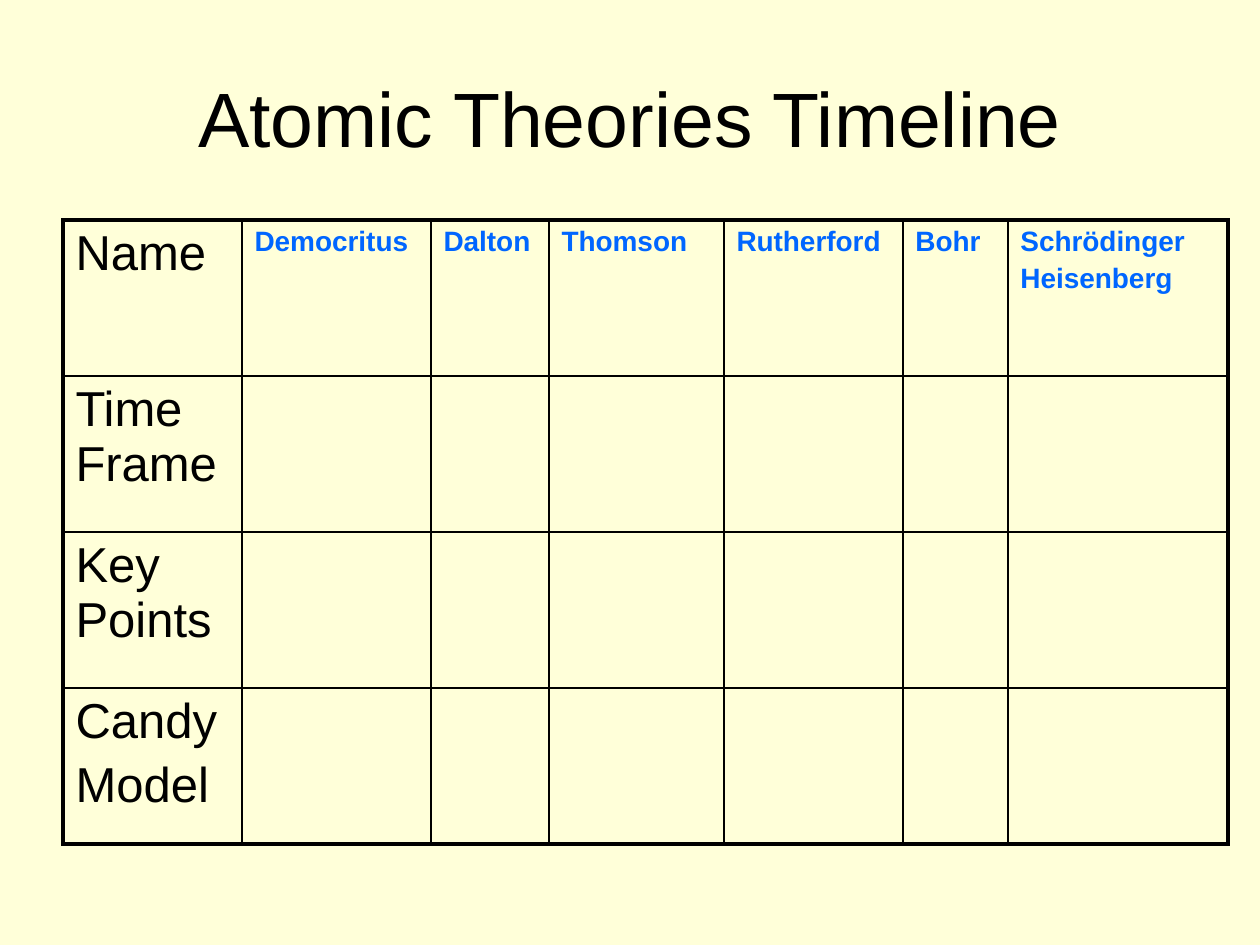
from pptx import Presentation, util as u
from pptx.dml.color import RGBColor
from pptx.enum import text
from pptx.oxml import parse_xml
from pptx.oxml.ns import nsdecls

PX = u.Inches(1) / 126
COLORS = {"paper": "FFFFD9", "ink": "000000", "name": "0066FF"}
FONT = "Arial"
THIN, THICK = 1, 2.25

COLUMN_WIDTHS = [179, 189, 118, 175, 179, 105, 220]
SCIENTISTS = ["Democritus", "Dalton", "Thomson", "Rutherford", "Bohr",
              "Schrödinger\nHeisenberg"]
ROW_LABELS = ["Name", "Time Frame", "Key Points", "Candy\nModel"]


def px(n):
    return u.Emu(round(n * PX))


def write(tf, words, size, color="ink", bold=False, align=text.PP_ALIGN.LEFT,
          before=0):
    """Write one paragraph per line; before is a share of the text size."""
    tf.word_wrap = True
    for i, line in enumerate(words.split("\n")):
        p = tf.paragraphs[0] if i == 0 else tf.add_paragraph()
        p.alignment = align
        p.space_before = u.Pt(round(size * before, 1))
        r = p.add_run()
        r.text = line
        r.font.name, r.font.size, r.font.bold = FONT, u.Pt(size), bold
        r.font.color.rgb = RGBColor.from_string(COLORS[color])


def set_borders(cell, **widths):
    """Line the sides L, R, T and B of a cell, given in that order."""
    tcPr = cell._tc.get_or_add_tcPr()
    for side, width in widths.items():
        tcPr.append(parse_xml(
            f'<a:ln{side} {nsdecls("a")} w="{u.Pt(width)}"><a:solidFill>'
            f'<a:srgbClr val="{COLORS["ink"]}"/></a:solidFill></a:ln{side}>'))


def add_title(s, x, y, w, h):
    tf = s.shapes.add_textbox(px(x), px(y), px(w), px(h)).text_frame
    tf.vertical_anchor = text.MSO_ANCHOR.MIDDLE
    write(tf, "Atomic Theories Timeline", 44, align=text.PP_ALIGN.CENTER)


def add_timeline(s, x, y, w, h):
    n_rows, n_cols = len(ROW_LABELS), len(COLUMN_WIDTHS)
    table = s.shapes.add_table(n_rows, n_cols, px(x), px(y), px(w), px(h)).table
    table.first_row = table.horz_banding = False
    for column, width in zip(table.columns, COLUMN_WIDTHS):
        column.width = px(width * w / sum(COLUMN_WIDTHS))
    for row in table.rows:
        row.height = px(h / n_rows)

    for i in range(n_rows):
        for j in range(n_cols):
            cell = table.cell(i, j)
            set_borders(cell,
                        L=THICK if j == 0 else THIN,
                        R=THICK if j == n_cols - 1 else THIN,
                        T=THICK if i == 0 else THIN,
                        B=THICK if i == n_rows - 1 else THIN)
            cell.fill.background()

    for i, label in enumerate(ROW_LABELS):
        write(table.cell(i, 0).text_frame, label, 28, before=0.2)
    for j, name in enumerate(SCIENTISTS, 1):
        write(table.cell(0, j).text_frame, name, 16, color="name", bold=True,
              before=0.2)


def main():
    prs = Presentation()
    prs.slide_width, prs.slide_height = px(1260), px(945)
    s = prs.slides.add_slide(prs.slide_layouts[6])
    s.background.fill.solid()
    s.background.fill.fore_color.rgb = RGBColor.from_string(COLORS["paper"])
    add_title(s, 63, 38, 1134, 157)
    add_timeline(s, 63, 220, 1165, 624)
    prs.save("out.pptx")


if __name__ == "__main__":
    main()
